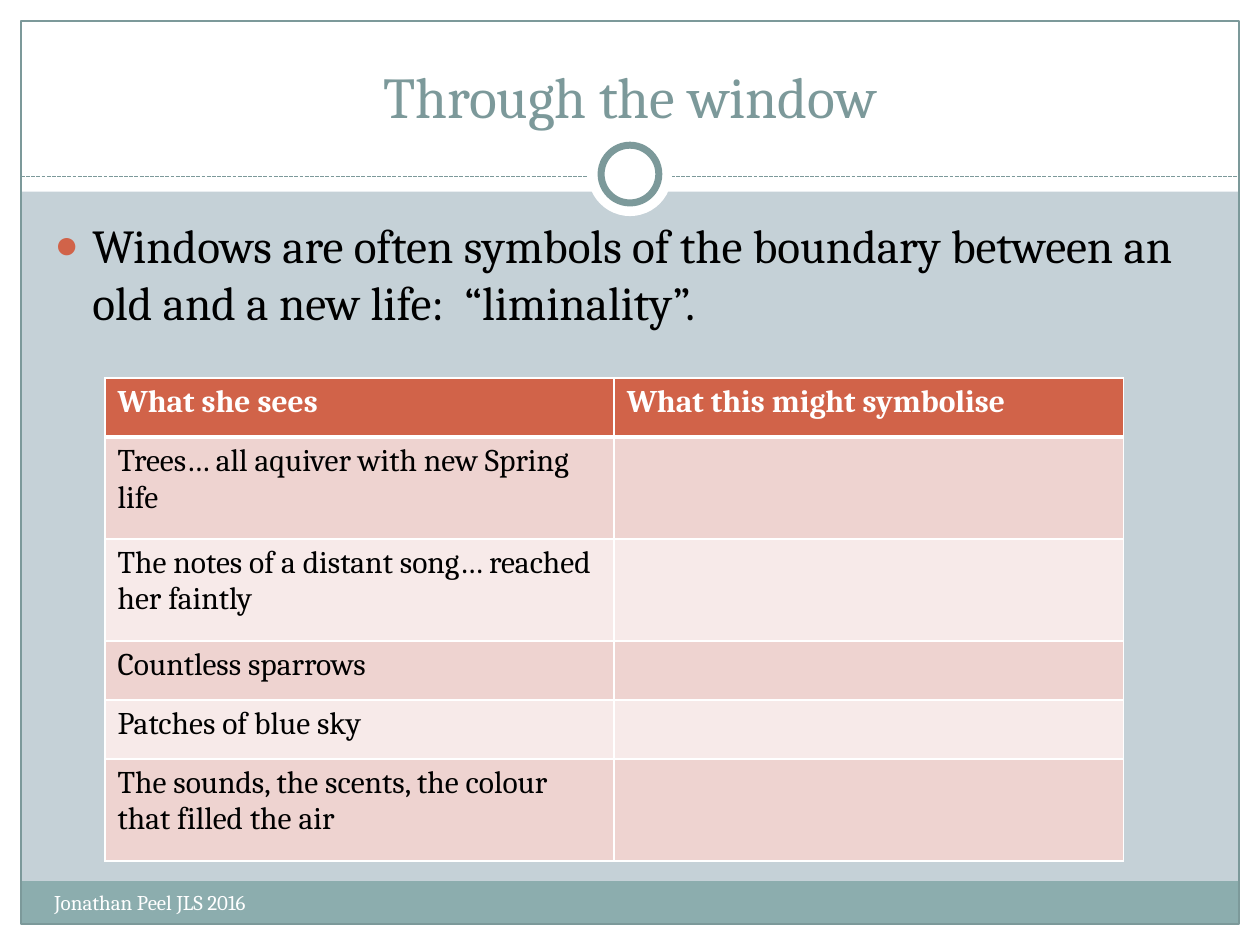
from lxml.etree import SubElement
from pptx import Presentation
from pptx.dml.color import RGBColor
from pptx.enum.dml import MSO_LINE
from pptx.enum.shapes import MSO_CONNECTOR, MSO_SHAPE
from pptx.enum.text import MSO_ANCHOR, MSO_AUTO_SIZE, PP_ALIGN
from pptx.oxml.ns import qn
from pptx.util import Pt

COLORS = {
    "back": "C5D1D7", "white": "FFFFFF", "black": "000000", "teal": "7C999A",
    "bar": "8CADAE", "red": "D16349", "odd": "EED3D0", "even": "F7EAE9",
}
WIDE, HIGH, EDGE = 720, 540, 12
ROWS = [
    ("What she sees", "What this might symbolise"),
    ("Trees… all aquiver with new Spring life", ""),
    ("The notes of a distant song… reached her faintly", ""),
    ("Countless sparrows", ""),
    ("Patches of blue sky", ""),
    ("The sounds, the scents, the colour that filled the air", ""),
]
SHORT, TALL = 33.75, 58.25
HEIGHTS = [SHORT, TALL, TALL, SHORT, SHORT, TALL]


def color(name):
    return RGBColor.from_string(COLORS[name])


def write(frame, text, size, tint, bold=False):
    para = frame.paragraphs[0]
    run = para.add_run()
    run.text = text
    form = {"name": "Cambria", "size": Pt(size), "bold": bold}
    for key, value in form.items():
        setattr(run.font, key, value)
    run.font.color.rgb = color(tint)
    return para


def add_form(slide, kind, box, fill=None, line=None, width=0.75):
    shape = slide.shapes.add_shape(kind, *map(Pt, box))
    shape.shadow.inherit = False
    if fill:
        shape.fill.solid()
        shape.fill.fore_color.rgb = color(fill)
    else:
        shape.fill.background()
    if line:
        shape.line.color.rgb = color(line)
        shape.line.width = Pt(width)
    else:
        shape.line.fill.background()


def add_frame(slide, box):
    """Draw the white margins, footer bar, outline and dashed rule."""
    left, top, width, height = box
    right, base = left + width, top + height
    inner = width - 2 * EDGE
    for part, fill in [
        ((left, base - EDGE, width, EDGE), "white"),
        ((left, top, width, 109.5), "white"),
        ((left, top, EDGE, height), "white"),
        ((right - EDGE, top, EDGE, height), "white"),
        ((left + EDGE, base - 36.5, inner, 24.5), "bar"),
    ]:
        add_form(slide, MSO_SHAPE.RECTANGLE, part, fill)
    outline = (left + EDGE, top + EDGE, inner, height - 2 * EDGE)
    add_form(slide, MSO_SHAPE.RECTANGLE, outline, line="teal")
    ends = (left + EDGE, top + 100.75, right - EDGE, top + 100.75)
    rule = slide.shapes.add_connector(MSO_CONNECTOR.STRAIGHT, *map(Pt, ends))
    rule.line.color.rgb = color("teal")
    rule.line.width = Pt(0.75)
    rule.line.dash_style = MSO_LINE.SQUARE_DOT
    rule.line.dash_style = MSO_LINE.SQUARE_DOT
    SubElement(rule.element.spPr, qn("a:effectLst"))


def add_ring(slide, box):
    left, top, size, _ = box
    gap = 7.5
    add_form(slide, MSO_SHAPE.OVAL, box, "white")
    inner = (left + gap, top + gap, size - 2 * gap, size - 2 * gap)
    add_form(slide, MSO_SHAPE.OVAL, inner, "white", "teal", 4)


def place(holder, box):
    """Move a placeholder to its box and in front of the frame."""
    for key, value in zip(("left", "top", "width", "height"), box):
        setattr(holder, key, Pt(value))
    holder.element.getparent().append(holder.element)
    frame = holder.text_frame
    frame.auto_size = MSO_AUTO_SIZE.NONE
    frame.word_wrap = True
    return frame


def set_title(slide, box):
    frame = place(slide.shapes.title, box)
    frame.vertical_anchor = MSO_ANCHOR.BOTTOM
    para = write(frame, "Through the window", 33, "teal")
    para.alignment = PP_ALIGN.CENTER


def set_body(slide, box):
    frame = place(slide.placeholders[1], box)
    text = ("Windows are often symbols of the boundary between an old "
            "and a new life:  “liminality”.")
    props = write(frame, text, 27, "black")._p.get_or_add_pPr()
    props.set("marL", str(Pt(21.6)))
    props.set("indent", str(-Pt(21.6)))
    tint = SubElement(props, qn("a:buClr"))
    SubElement(tint, qn("a:srgbClr"), val=COLORS["red"])
    SubElement(props, qn("a:buSzPct"), val="85000")
    SubElement(props, qn("a:buChar"), char="●")


def add_borders(cell, widths):
    props = cell._tc.get_or_add_tcPr()
    for side, width in widths.items():
        line = SubElement(props, qn(f"a:ln{side}"), w=str(Pt(width)))
        fill = SubElement(line, qn("a:solidFill"))
        SubElement(fill, qn("a:srgbClr"), val=COLORS["white"])


def add_grid(slide, box):
    count = len(ROWS[0])
    table = slide.shapes.add_table(len(ROWS), count, *map(Pt, box)).table
    for col in table.columns:
        col.width = Pt(box[2] / count)
    for r, (texts, height) in enumerate(zip(ROWS, HEIGHTS)):
        table.rows[r].height = Pt(height)
        head = r == 0
        fill = "red" if head else "odd" if r % 2 else "even"
        widths = {"L": 1, "R": 1, "T": 3 if r == 1 else 1, "B": 3 if head else 1}
        for c, text in enumerate(texts):
            cell = table.cell(r, c)
            add_borders(cell, widths)
            cell.fill.solid()
            cell.fill.fore_color.rgb = color(fill)
            if text:
                write(cell.text_frame, text, 18, "white" if head else "black", head)


def add_credit(slide, box):
    frame = slide.shapes.add_textbox(*map(Pt, box)).text_frame
    frame.word_wrap = True
    write(frame, "Jonathan Peel JLS 2016", 12, "white")


def main():
    deck = Presentation()
    deck.slide_width, deck.slide_height = Pt(WIDE), Pt(HIGH)
    slide = deck.slides.add_slide(deck.slide_layouts[1])
    slide.background.fill.solid()
    slide.background.fill.fore_color.rgb = color("back")
    add_frame(slide, (0, 0, WIDE, HIGH))
    add_ring(slide, (336, 75.5, 48, 48))
    set_title(slide, (24, 18, 672, 60))
    set_body(slide, (24, 120, 670, 360))
    add_grid(slide, (60, 216, 582, sum(HEIGHTS)))
    add_credit(slide, (24, 504.5, 282, 29))
    deck.save("out.pptx")


if __name__ == "__main__":
    main()
